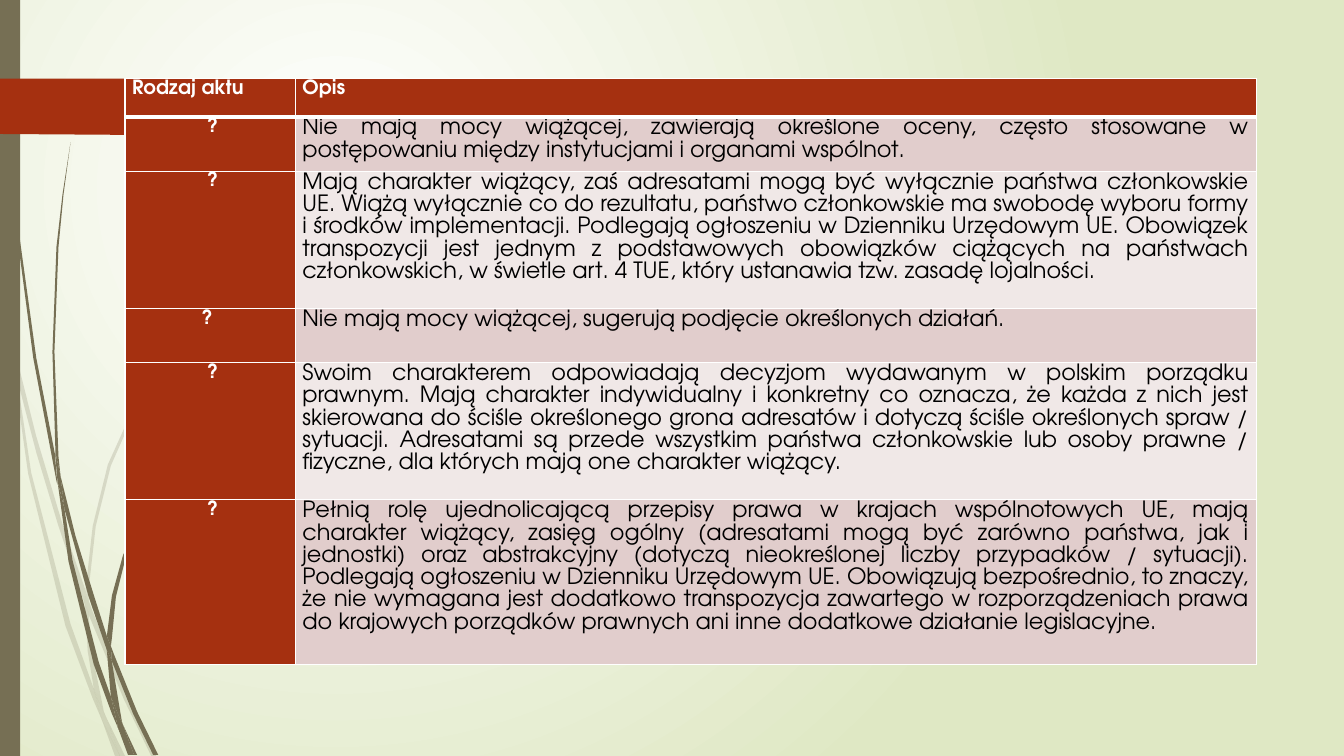
from dataclasses import dataclass

from lxml import etree
from pptx import Presentation
from pptx import util as u
from pptx.dml.color import RGBColor
from pptx.enum import shapes, text
from pptx.oxml import ns


@dataclass(frozen=True)
class Theme:
    font: str = "TeX Gyre Adventor"
    label_size: int = 14
    body_size: int = 16
    accent: str = "A53010"
    stem: str = "766F54"
    band_dark: str = "E1CDCC"
    band_light: str = "F0E8E7"
    light: str = "FFFFFF"
    dark: str = "000000"
    meadow: str = "DFE8C4"


PALE_BLADES = [
    [(0.11, 3.5), (0.09, 3.22), (0, 2.82), (0, 2.99), (0.1, 3.44)],
    [(0.58, 5.22), (0.84, 5.99), (0.85, 5.86), (0.62, 5.2), (0.36, 4.33),
     (0.14, 3.45), (0.17, 3.76), (0.36, 4.49)],
    [(0.92, 6.07), (0.88, 5.96), (0.88, 6.1), (1.23, 6.94), (1.5, 7.5),
     (1.55, 7.5), (1.27, 6.92)],
    [(1.19, 7.5), (1.24, 7.5), (1.05, 7.11)],
    [(0.93, 6.83), (0.7, 6.19), (0.31, 4.69), (0.17, 3.76), (0.11, 3.5),
     (0.28, 4.7), (0.65, 6.21), (0.92, 6.93), (1.01, 7.14), (0.99, 7.07)],
    [(0.84, 5.99), (0.87, 6.46), (0.93, 6.83), (0.96, 6.92), (1.05, 7.11),
     (1.03, 7.06), (0.91, 6.46), (0.88, 6.1), (0.88, 6.08)],
    [(0.88, 5.84), (0.95, 5.22), (1.1, 4.62), (1.6, 3.49), (2.29, 2.45),
     (2.68, 1.98), (3.12, 1.54), (3.12, 1.53), (2.68, 1.97), (2.28, 2.44),
     (1.58, 3.48), (1.07, 4.61), (0.92, 5.22), (0.85, 5.84), (0.88, 5.96)],
    [(1.01, 7.14), (1.14, 7.5), (1.19, 7.5)],
    [(0.88, 6.08), (0.88, 6.1), (0.88, 5.96), (0.85, 5.86), (0.84, 5.99)],
    [(0.96, 6.92), (0.93, 6.83), (0.99, 7.07), (1.01, 7.14), (1.19, 7.5),
     (1.05, 7.11)],
]

DARK_BLADES = [
    [(0.07, 1.1), (0.17, 2.33), (0.33, 3.55), (0.56, 4.77), (0.57, 4.81),
     (0.55, 4.57), (0.55, 4.53), (0.36, 3.55), (0.19, 2.32), (0.08, 1.09),
     (0.05, 0.48), (0.04, 0), (0.03, 0), (0.04, 0.48)],
    [(0.88, 5.92), (1.06, 6.45), (1.06, 6.31), (0.93, 5.9), (0.75, 5.32),
     (0.6, 4.72), (0.64, 5.05)],
    [(1.13, 6.49), (1.1, 6.41), (1.11, 6.56), (1.32, 7.08), (1.52, 7.49),
     (1.57, 7.49), (1.36, 7.06)],
    [(1.1, 6.91), (0.98, 6.57), (0.72, 5.56), (0.64, 5.05), (0.57, 4.77),
     (0.68, 5.57), (0.93, 6.59), (1.11, 7.08), (1.17, 7.22), (1.16, 7.17)],
    [(0.6, 4.72), (0.58, 4.53), (0.54, 3.49), (0.58, 2.45), (0.63, 1.93),
     (0.7, 1.41), (0.62, 1.93), (0.56, 2.45), (0.52, 3.49), (0.55, 4.49)],
    [(1.33, 7.49), (1.36, 7.49), (1.22, 7.19)],
    [(0.57, 4.77), (0.64, 5.05), (0.6, 4.72), (0.55, 4.49), (0.55, 4.53)],
    [(1.11, 6.33), (1.15, 5.92), (1.25, 5.52), (1.58, 4.76), (2.05, 4.06),
     (2.31, 3.74), (2.61, 3.44), (2.6, 3.44), (2.31, 3.73), (2.04, 4.05),
     (1.56, 4.74), (1.22, 5.51), (1.11, 5.91), (1.06, 6.31), (1.1, 6.41)],
    [(1.17, 7.22), (1.27, 7.49), (1.31, 7.49)],
    [(1.06, 6.45), (1.1, 6.91), (1.16, 7.06), (1.22, 7.19), (1.21, 7.16),
     (1.11, 6.56), (1.09, 6.51)],
    [(1.06, 6.45), (1.09, 6.51), (1.11, 6.56), (1.1, 6.41), (1.06, 6.31)],
    [(1.16, 7.06), (1.1, 6.91), (1.16, 7.17), (1.17, 7.22), (1.3, 7.49),
     (1.33, 7.49), (1.22, 7.19)],
]

RIBBON = [(0, 0.78), (1.46, 0.78), (1.48, 0.79), (1.73, 1.04), (1.74, 1.06),
          (1.73, 1.08), (1.48, 1.33), (1.46, 1.34), (0, 1.33)]

ROWS = [
    (0.38, "Rodzaj aktu", "Opis"),
    (0.54, " ?", "Nie mają mocy wiążącej, zawierają określone oceny, często stosowane w "
     "postępowaniu między instytucjami i organami wspólnot."),
    (1.36, " ?", "Mają charakter wiążący, zaś adresatami mogą być wyłącznie państwa "
     "członkowskie UE. Wiążą wyłącznie co do rezultatu, państwo członkowskie ma swobodę "
     "wyboru formy i środków implementacji. Podlegają ogłoszeniu w Dzienniku Urzędowym UE. "
     "Obowiązek transpozycji jest jednym z podstawowych obowiązków ciążących na państwach "
     "członkowskich, w świetle art. 4 TUE, który ustanawia tzw. zasadę lojalności."),
    (0.54, "? ", "Nie mają mocy wiążącej, sugerują podjęcie określonych działań."),
    (1.36, " ?", "Swoim charakterem odpowiadają decyzjom wydawanym w polskim porządku "
     "prawnym. Mają charakter indywidualny i konkretny co oznacza, że każda z nich jest "
     "skierowana do ściśle określonego grona adresatów i dotyczą ściśle określonych spraw / "
     "sytuacji. Adresatami są przede wszystkim państwa członkowskie lub osoby prawne / "
     "fizyczne, dla których mają one charakter wiążący."),
    (1.63, " ?", "Pełnią rolę ujednolicającą przepisy prawa w krajach wspólnotowych UE, mają "
     "charakter wiążący, zasięg ogólny (adresatami mogą być zarówno państwa, jak i "
     "jednostki) oraz abstrakcyjny (dotyczą nieokreślonej liczby przypadków / sytuacji). "
     "Podlegają ogłoszeniu w Dzienniku Urzędowym UE. Obowiązują bezpośrednio, to znaczy, "
     "że nie wymagana jest dodatkowo transpozycja zawartego w rozporządzeniach prawa do "
     "krajowych porządków prawnych ani inne dodatkowe działanie legislacyjne."),
]


class SlideBuilder:
    """Draws styled elements on the current slide."""

    def __init__(self, slide, theme):
        self.slide = slide
        self.theme = theme

    def background(self):
        fill = self.slide.background.fill
        fill.gradient()
        colors = (self.theme.light, self.theme.meadow)
        for stop, position, color in zip(fill.gradient_stops, (0, 1), colors):
            stop.position = position
            stop.color.rgb = RGBColor.from_string(color)
        gradient = self.slide.element.find(".//" + ns.qn("a:gradFill"))
        gradient.remove(gradient.find(ns.qn("a:lin")))
        circle = etree.Element(ns.qn("a:path"), path="circle")
        etree.SubElement(circle, ns.qn("a:fillToRect"),
                         l="50000", t="50000", r="100000", b="100000")
        gradient.find(ns.qn("a:gsLst")).addnext(circle)

    def paint(self, shape, color, opacity=100):
        shape.shadow.inherit = False
        shape.line.fill.background()
        shape.fill.solid()
        shape.fill.fore_color.rgb = RGBColor.from_string(color)
        if opacity < 100:
            rgb = shape.element.spPr.find(".//" + ns.qn("a:srgbClr"))
            etree.SubElement(rgb, ns.qn("a:alpha"), val=str(opacity * 1000))

    def outline(self, points, color, opacity=100):
        start, *rest = [(u.Inches(x), u.Inches(y)) for x, y in points]
        builder = self.slide.shapes.build_freeform(*start)
        builder.add_line_segments(rest, close=True)
        self.paint(builder.convert_to_shape(), color, opacity)

    def bar(self, left, top, width, height, color):
        box = [u.Inches(length) for length in (left, top, width, height)]
        self.paint(self.slide.shapes.add_shape(shapes.MSO_SHAPE.RECTANGLE, *box), color)

    def borders(self, cell, widths):
        properties = cell._tc.get_or_add_tcPr()
        for index, (side, width) in enumerate(zip("LRTB", widths)):
            line = etree.Element(ns.qn("a:ln" + side), w=str(u.Pt(width)))
            solid = etree.SubElement(line, ns.qn("a:solidFill"))
            etree.SubElement(solid, ns.qn("a:srgbClr"), val=self.theme.light)
            properties.insert(index, line)

    def cell(self, cell, words, fill, size, color, bold, alignment):
        cell.margin_left = cell.margin_right = u.Inches(0.07)
        cell.margin_top = cell.margin_bottom = 0
        cell.fill.solid()
        cell.fill.fore_color.rgb = RGBColor.from_string(fill)
        cell.text = words
        paragraph = cell.text_frame.paragraphs[0]
        paragraph.alignment = alignment
        paragraph.line_spacing = 1.07
        paragraph.font.name = self.theme.font
        paragraph.font.size = u.Pt(size)
        paragraph.font.bold = bold
        paragraph.font.color.rgb = RGBColor.from_string(color)

    def table(self, left, top, column_widths, rows):
        theme, align = self.theme, text.PP_ALIGN
        height = sum(row[0] for row in rows)
        table = self.slide.shapes.add_table(
            len(rows), len(column_widths), u.Inches(left), u.Inches(top),
            u.Inches(sum(column_widths)), u.Inches(height)).table
        for column, width in zip(table.columns, column_widths):
            column.width = u.Inches(width)
        for index, (row_height, *words) in enumerate(rows):
            table.rows[index].height = u.Inches(row_height)
            band = theme.band_dark if index % 2 else theme.band_light
            for position, content in enumerate(words):
                cell = table.cell(index, position)
                centred = index > 0 and position == 0
                alignment = align.CENTER if centred else align.JUSTIFY
                if index == 0 or position == 0:
                    style = (theme.accent, theme.label_size, theme.light, True)
                else:
                    style = (band, theme.body_size, theme.dark, False)
                self.cell(cell, content, *style, alignment)
                self.borders(cell, (1, 1, 3 if index == 1 else 1, 3 if index == 0 else 1))


def main():
    presentation = Presentation()
    presentation.slide_width = u.Inches(13.33)
    presentation.slide_height = u.Inches(7.5)
    theme = Theme()
    builder = SlideBuilder(presentation.slides.add_slide(presentation.slide_layouts[6]), theme)
    builder.background()
    for blades, opacity in ((PALE_BLADES, 20), (DARK_BLADES, 100)):
        for blade in blades:
            builder.outline(blade, theme.stem, opacity)
    builder.bar(0, 0, 0.2, 7.5, theme.stem)
    builder.outline(RIBBON, theme.accent)
    builder.table(1.24, 0.78, (1.69, 9.53), ROWS)
    presentation.save("out.pptx")


if __name__ == "__main__":
    main()
